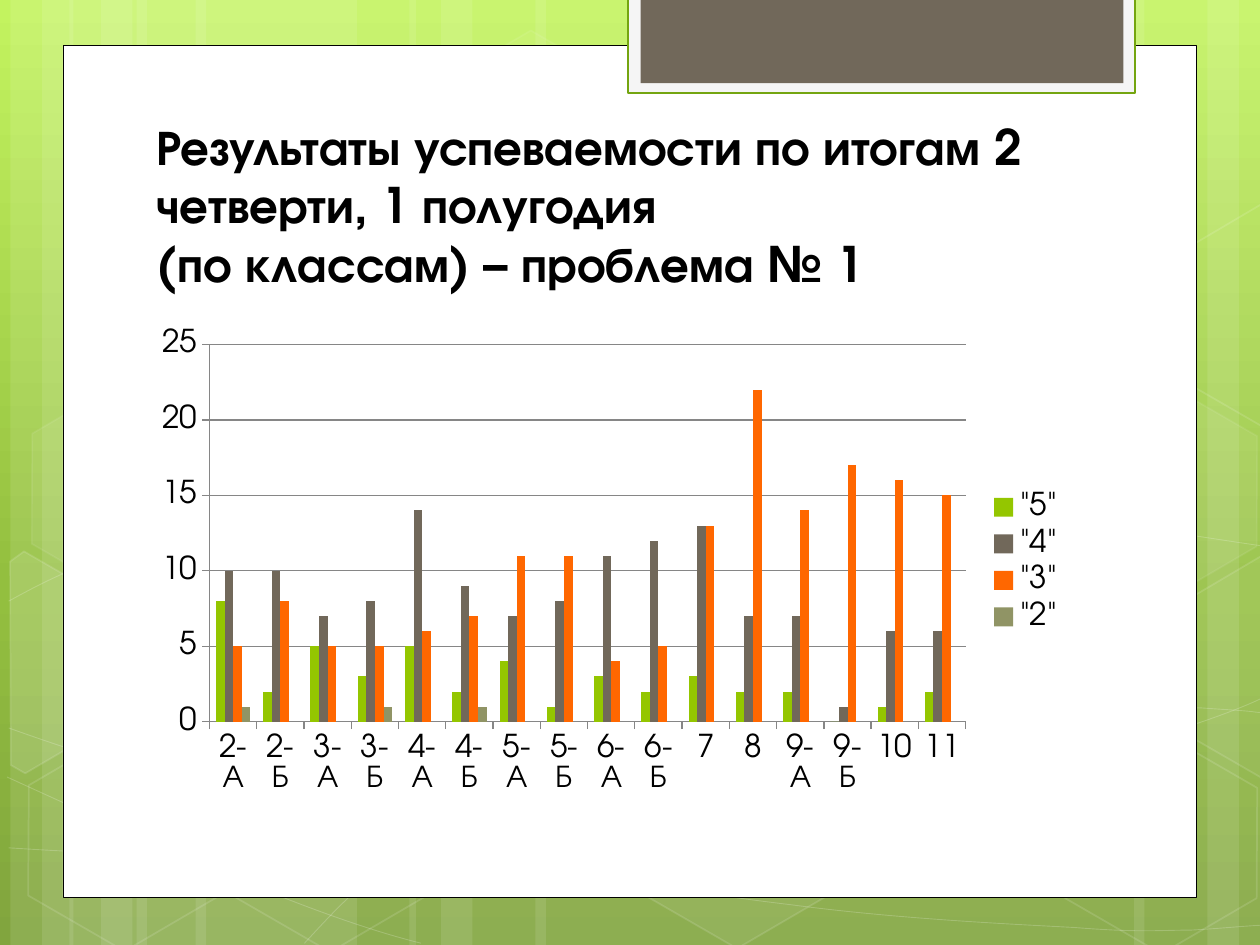
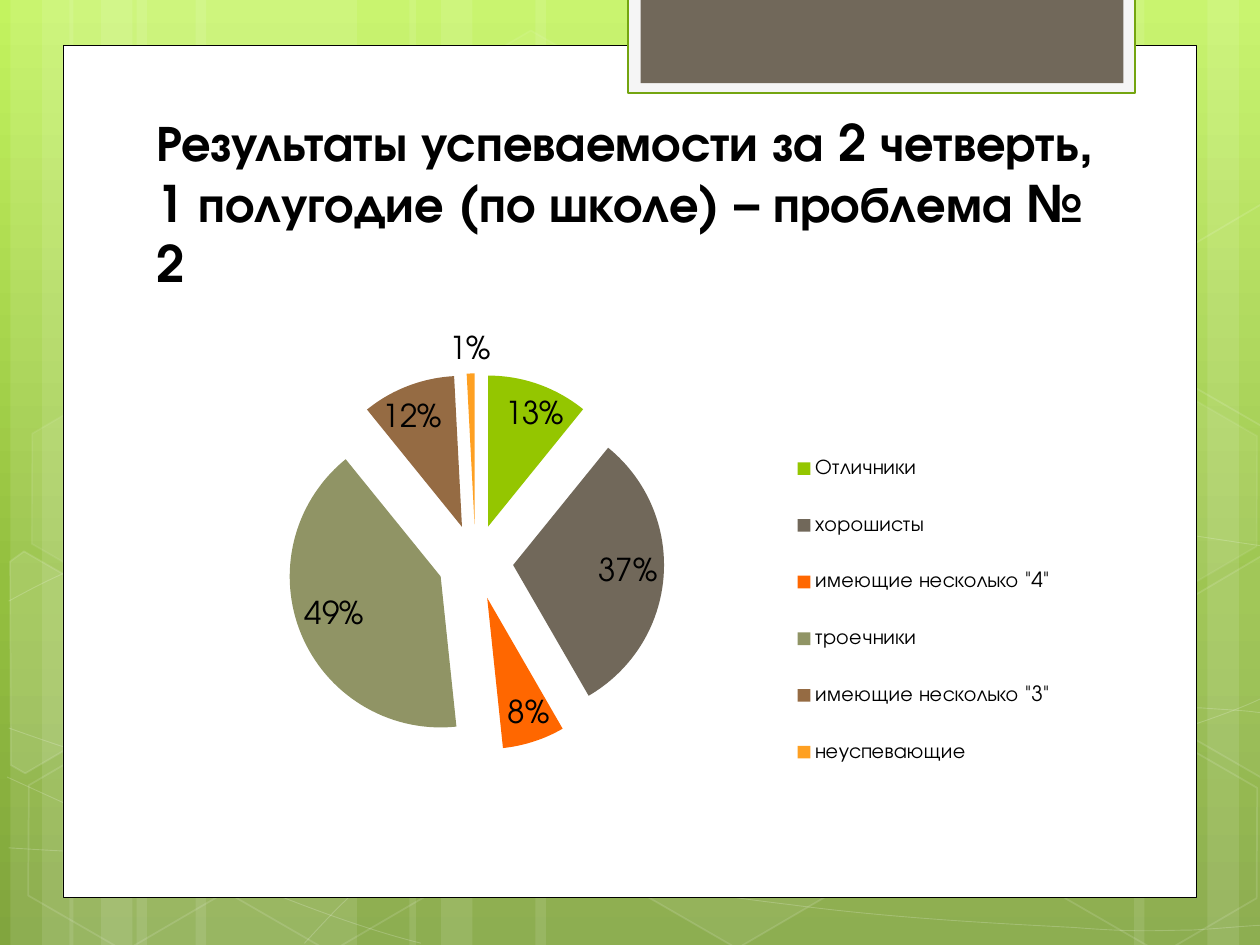
from copy import deepcopy
from dataclasses import dataclass

from lxml.etree import SubElement
from pptx import Presentation
from pptx.chart.data import CategoryChartData
from pptx.dml.color import RGBColor
from pptx.enum.chart import XL_CHART_TYPE, XL_LABEL_POSITION, XL_LEGEND_POSITION, XL_TICK_MARK
from pptx.enum.shapes import MSO_SHAPE
from pptx.enum.text import MSO_ANCHOR
from pptx.oxml.ns import qn
from pptx.util import Pt


@dataclass(frozen=True)
class Theme:
    font: str = "TeX Gyre Adventor"
    white: str = "FFFFFF"
    black: str = "000000"
    tab_rim: str = "F5F5F5"
    tab_line: str = "74A510"
    tab: str = "71685A"
    axis: str = "868686"
    background: tuple = ((0, "C3F35F"), (0.62, "93BF3F"), (1, "81A53E"))
    accents: tuple = ("94C600", "71685A", "FF6700", "909465", "956B43", "FEA022")
    chart_size: float = 18
    legend_size: float = 12


T = Theme()


def paint(sp, fill=None, line=None, width=1, fill_alpha=100, line_alpha=100):
    sp.shadow.inherit = False
    for fmt, color, alpha, tag in (
        (sp.fill, fill, fill_alpha, "a:solidFill"),
        (sp.line.fill, line, line_alpha, "a:ln/a:solidFill"),
    ):
        if color is None:
            fmt.background()
            continue
        fmt.solid()
        fmt.fore_color.rgb = RGBColor.from_string(color)
        if alpha < 100:
            steps = "/".join(qn(t) for t in tag.split("/"))
            clr = sp._element.spPr.find(steps)[0]
            SubElement(clr, qn("a:alpha")).set("val", str(alpha * 1000))
    if line:
        sp.line.width = Pt(width)


def place(parent, index, x, y, w, h, inner=False):
    for old in parent.findall(qn("c:layout")):
        parent.remove(old)
    layout = parent.makeelement(qn("c:layout"))
    manual = SubElement(layout, qn("c:manualLayout"))
    values = [("xMode", "edge"), ("yMode", "edge"), ("x", x), ("y", y), ("w", w), ("h", h)]
    if inner:
        values.insert(0, ("layoutTarget", "inner"))
    for name, value in values:
        SubElement(manual, qn("c:" + name)).set("val", str(value))
    parent.insert(index, layout)


STRIPES = [
    (78, 126), (6, 36), (24, 60), (111.75, 126), (39.75, 36), (57.75, 60),
    (528, 126), (690, 36), (648, 60), (306, 222), (234, 36), (252, 60),
]

CURVES = [
    [(5, 484.5), (44, 487), (83, 489), (137, 488), (191, 487), (258, 486), (330, 479),
     (402, 472), (504, 458), (570, 444), (636, 430.5), (703, 409), (725, 397)],
    [(5, 343.5), (26, 332), (47, 321), (87, 310), (128, 300), (186.5, 284), (250, 278.5),
     (314, 273.5), (392, 273), (471, 278.5), (550, 284.5), (682, 306.5), (725, 312.5)],
    [(4, 444), (91.5, 484), (178, 523.5), (240.5, 539)],
    [(5, 416), (27.5, 424), (50.5, 432), (92, 443.5), (134, 454.5), (196.5, 472.5),
     (257, 484.5), (317, 497), (392.5, 510), (452, 517), (512, 525), (576, 528), (614, 530),
     (651.5, 533), (661.5, 531.5), (680.5, 531.5), (699, 530.5), (712, 529), (725, 528.5)],
    [(174, 539), (187, 525), (200, 510.5), (217.5, 497.5), (235, 484.5), (259, 470),
     (279.5, 460), (300, 450), (312, 445.5), (338.5, 438.5), (364.5, 431.5), (412.5, 421),
     (438, 416), (463.5, 411), (467.5, 411), (489.5, 409.5), (512, 407.5), (547, 405.5),
     (571.5, 404.5), (597, 404), (638, 404.5), (638, 404.5), (654, 404.5), (670, 404.5),
     (686, 404.5), (699, 405.5), (711.5, 406), (718, 407), (724, 407.5), (722, 407),
     (724.5, 407.5)],
]

HEXAGONS = [
    (240.5, 26, 4, 8), (358, 424, 6, 12), (8, 425.5, 0, 12), (10, 224.5, 7, 8),
    (125.5, 426, 0, 12), (542, 326, 10, 12), (600.5, 427, 0, 12), (600.5, 226, 7, 8),
]

LEFT_CUT = [(0, 9), (4, 0), (68, 0), (99, 55), (68, 109.5), (58.5, 109.5)]
RIGHT_CUT = [(0, 54), (30.5, 0), (37.5, 0), (98, 104), (94.5, 109.5), (31.5, 109.5)]
CUT_HEXAGONS = [
    (-23.75, 330.5, LEFT_CUT, 10),
    (660.25, 319.75, RIGHT_CUT, 4),
    (660.25, 118.75, RIGHT_CUT, 0),
]

PANELS = [
    (36, 26, 648, 487, T.white, T.black, 0.5),
    (359, -1.5, 289.5, 54.75, T.tab_rim, T.tab_line, 1.25),
    (366, -1.5, 276, 49, T.tab, None, 0),
]

TITLES = [
    ("Результаты успеваемости по итогам 2 четверти, 1 полугодия \v(по классам) – проблема № 1", 28),
    ("Результаты успеваемости за 2 четверть, 1 полугодие (по школе) – проблема № 2", 28.8),
]

CLASSES = ["2-А", "2-Б", "3-А", "3-Б", "4-А", "4-Б", "5-А", "5-Б",
           "6-А", "6-Б", "7", "8", "9-А", "9-Б", "10", "11"]
grades = CategoryChartData()
grades.categories = CLASSES
grades.add_series('"5"', [8, 2, 5, 3, 5, 2, 4, 1, 3, 2, 3, 2, 2, 0, 1, 2])
grades.add_series('"4"', [10, 10, 7, 8, 14, 9, 7, 8, 11, 12, 13, 7, 7, 1, 6, 6])
grades.add_series('"3"', [5, 8, 5, 5, 6, 7, 11, 11, 4, 5, 13, 22, 14, 17, 16, 15])
grades.add_series('"2"', [{"2-А": 1, "3-Б": 1, "4-Б": 1}.get(c) for c in CLASSES])

shares = CategoryChartData(number_format="0%")
shares.categories = ["Отличники", "хорошисты", 'имеющие несколько "4"',
                     "троечники", 'имеющие несколько "3"', "неуспевающие"]
shares.add_series("Series 1", [0.13, 0.37, 0.08, 0.49, 0.12, 0.01])

CHARTS = [
    (XL_CHART_TYPE.COLUMN_CLUSTERED, grades, (0.07, 0.05, 0.81, 0.78)),
    (XL_CHART_TYPE.PIE, shares, (0.15, 0.11, 0.41, 0.78)),
]

prs = Presentation()
prs.slide_width, prs.slide_height = Pt(720), Pt(540)
charts = []

for (title, size), (kind, data, plot_box) in zip(TITLES, CHARTS):
    s = prs.slides.add_slide(prs.slide_layouts[6])
    bg = s.background.fill
    bg.gradient()
    bg.gradient_angle = 270
    stops = next(s._element.iter(qn("a:gsLst")))
    stops.append(deepcopy(stops[0]))
    for stop, (position, color) in zip(bg.gradient_stops, T.background):
        stop.position = position
        stop.color.rgb = RGBColor.from_string(color)

    for x, w in STRIPES:
        stripe = s.shapes.add_shape(MSO_SHAPE.RECTANGLE, Pt(x), 0, Pt(w), prs.slide_height)
        paint(stripe, T.white, fill_alpha=10)

    for nodes in CURVES:
        points = [(Pt(x), Pt(y)) for x, y in nodes]
        fb = s.shapes.build_freeform(*points[0])
        fb.add_line_segments(points[1:], close=False)
        curve = fb.convert_to_shape()
        lines = list(curve._element.iter(qn("a:lnTo")))
        for i in range(0, len(lines), 3):
            bezier = lines[i].makeelement(qn("a:cubicBezTo"))
            lines[i].addprevious(bezier)
            for line in lines[i:i + 3]:
                bezier.append(line[0])
                line.getparent().remove(line)
        paint(curve, line=T.white, width=0.5, line_alpha=20)

    for x, y, fill_alpha, line_alpha in HEXAGONS:
        hexagon = s.shapes.add_shape(MSO_SHAPE.HEXAGON, Pt(x), Pt(y), Pt(126), Pt(109.5))
        hexagon.rotation = 30
        hexagon.adjustments[0] = 0.285
        paint(hexagon, T.white if fill_alpha else None, T.white, 1, fill_alpha, line_alpha)

    for left, top, nodes, fill_alpha in CUT_HEXAGONS:
        points = [(Pt(left + x), Pt(top + y)) for x, y in nodes]
        fb = s.shapes.build_freeform(*points[0])
        fb.add_line_segments(points[1:], close=True)
        cut = fb.convert_to_shape()
        cut.rotation = 30
        paint(cut, T.white if fill_alpha else None, T.white, 1, fill_alpha, 12)

    for x, y, w, h, fill, line, width in PANELS:
        panel = s.shapes.add_shape(MSO_SHAPE.RECTANGLE, Pt(x), Pt(y), Pt(w), Pt(h))
        paint(panel, fill, line, width)

    tf = s.shapes.add_textbox(Pt(82.4), Pt(80.75), Pt(553), Pt(90)).text_frame
    tf.word_wrap = True
    tf.vertical_anchor = MSO_ANCHOR.BOTTOM
    p = tf.paragraphs[0]
    p.text = title
    p.font.name, p.font.size, p.font.bold = T.font, Pt(size), True
    p.font.color.rgb = RGBColor.from_string(T.black)

    chart = s.shapes.add_chart(kind, Pt(82.4), Pt(183), Pt(533.5), Pt(276.5), data).chart
    chart.has_title = False
    chart.font.name, chart.font.size = T.font, Pt(T.chart_size)
    chart.font.color.rgb = RGBColor.from_string(T.black)
    chart.has_legend = True
    chart.legend.position = XL_LEGEND_POSITION.RIGHT
    chart.legend.include_in_layout = False
    place(chart._chartSpace.chart.plotArea, 0, *plot_box, inner=True)
    charts.append(chart)

columns, pie = charts

plot = columns.plots[0]
plot.gap_width = 150
plot.overlap = 0
plot.vary_by_categories = False
for series, color in zip(plot.series, T.accents):
    series.format.fill.solid()
    series.format.fill.fore_color.rgb = RGBColor.from_string(color)
    series.invert_if_negative = False
value_axis = columns.value_axis
value_axis.minimum_scale, value_axis.maximum_scale, value_axis.major_unit = 0, 25, 5
value_axis.has_major_gridlines = True
for axis in (columns.category_axis, value_axis):
    axis.major_tick_mark = XL_TICK_MARK.OUTSIDE
    axis.format.line.color.rgb = RGBColor.from_string(T.axis)
value_axis.major_gridlines.format.line.color.rgb = RGBColor.from_string(T.axis)

plot = pie.plots[0]
plot.vary_by_categories = True
series = plot.series[0]
for i, color in enumerate(T.accents):
    fill = series.points[i].format.fill
    fill.solid()
    fill.fore_color.rgb = RGBColor.from_string(color)
ser = series._element
explosion = ser.makeelement(qn("c:explosion"))
explosion.set("val", "25")
ser.find(qn("c:dPt")).addprevious(explosion)
labels = series.data_labels
labels.show_value = True
labels.number_format, labels.number_format_is_linked = "0%", False
labels.position = XL_LABEL_POSITION.BEST_FIT
pie.legend.font.name, pie.legend.font.size = T.font, Pt(T.legend_size)
place(pie.legend._element, 1, 0.69, 0.21, 0.29, 0.78)

prs.save("out.pptx")
